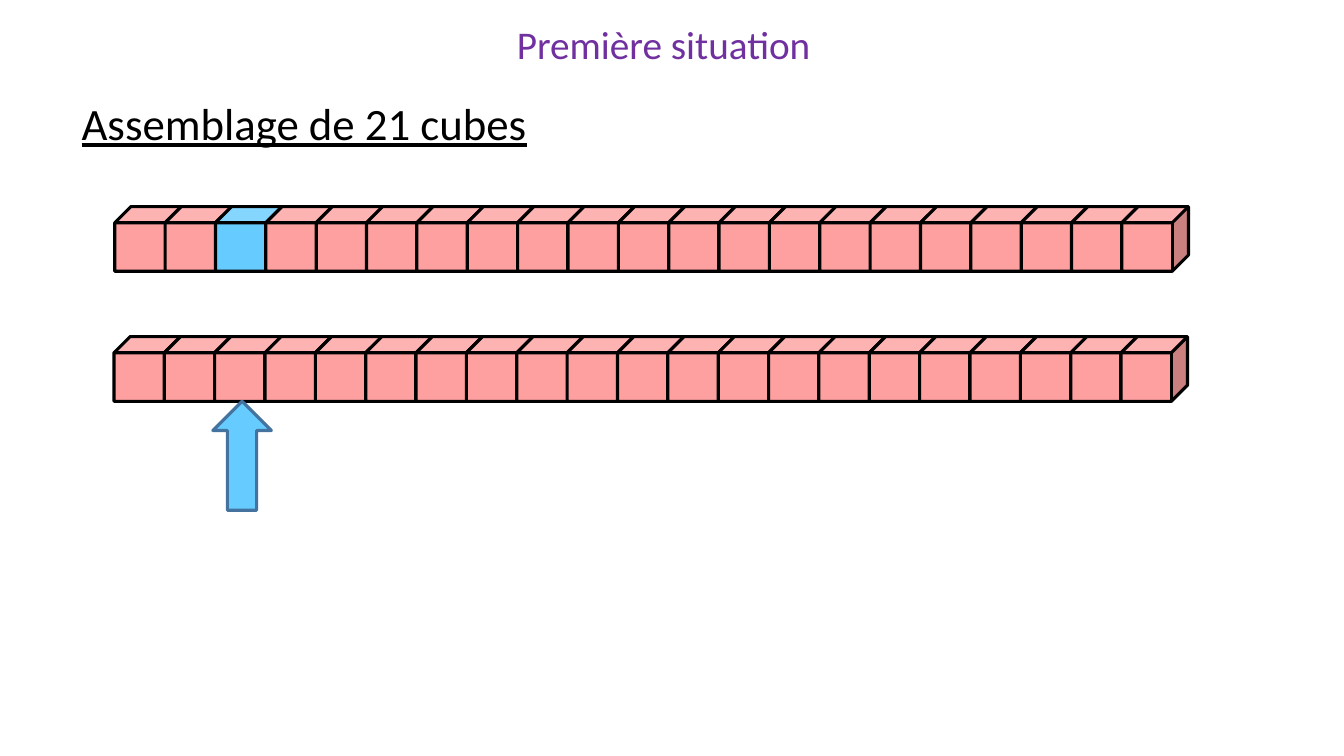
from dataclasses import dataclass

from pptx import Presentation
from pptx.dml.color import RGBColor
from pptx.enum.shapes import MSO_SHAPE
from pptx.enum.text import MSO_ANCHOR, PP_ALIGN
from pptx.util import Pt


@dataclass(frozen=True)
class Theme:
    """Colours, font and sizes of the slide."""

    font: str = "Calibri"
    title_size: float = 28
    heading_size: float = 32
    outline_width: float = 2.25
    title: str = "7030A0"
    ink: str = "000000"
    cube: str = "FEA0A0"
    highlight: str = "66CCFF"
    arrow_outline: str = "43739E"


class SlideBuilder:
    """Draws styled elements on one slide, with lengths in points."""

    def __init__(self, slide, theme):
        self.slide = slide
        self.theme = theme

    def text(self, box, wording, size, color, underline=None,
             align=PP_ALIGN.LEFT, anchor=MSO_ANCHOR.TOP, line_spacing=None):
        """Add a text box holding a single run."""
        frame = self.slide.shapes.add_textbox(*map(Pt, box)).text_frame
        frame.word_wrap = True
        frame.vertical_anchor = anchor
        paragraph = frame.paragraphs[0]
        paragraph.alignment = align
        paragraph.line_spacing = line_spacing
        run = paragraph.add_run()
        run.text = wording
        run.font.name = self.theme.font
        run.font.size = Pt(size)
        run.font.underline = underline
        run.font.color.rgb = RGBColor.from_string(color)

    def shape(self, kind, box, fill, outline, shapes=None):
        """Add a filled and outlined preset shape."""
        if shapes is None:
            shapes = self.slide.shapes
        shape = shapes.add_shape(kind, *map(Pt, box))
        shape.shadow.inherit = False
        shape.fill.solid()
        shape.fill.fore_color.rgb = RGBColor.from_string(fill)
        shape.line.color.rgb = RGBColor.from_string(outline)
        shape.line.width = Pt(self.theme.outline_width)

    def cube_bar(self, left, top, count=21, highlighted=None):
        """Add a grouped row of overlapping cubes."""
        width, height, pitch = 47.5, 46.2, 35.97
        group = self.slide.shapes.add_group_shape()
        for index in range(count):
            fill = self.theme.highlight if index == highlighted else self.theme.cube
            box = (left + index * pitch, top, width, height)
            self.shape(MSO_SHAPE.CUBE, box, fill, self.theme.ink, group.shapes)


def main():
    """Build and save the slide."""
    presentation = Presentation()
    presentation.slide_width, presentation.slide_height = Pt(960), Pt(540)
    slide = presentation.slides.add_slide(presentation.slide_layouts[6])
    theme = Theme()
    builder = SlideBuilder(slide, theme)
    builder.cube_bar(81.4, 240.5)
    builder.text((60, 20, 828, 27.4), "Première situation", theme.title_size,
                 theme.title, align=PP_ALIGN.CENTER, anchor=MSO_ANCHOR.MIDDLE,
                 line_spacing=0.9)
    builder.cube_bar(82, 147.6, highlighted=2)
    builder.text((51.2, 64.8, 545.8, 46), "Assemblage de 21 cubes",
                 theme.heading_size, theme.ink, underline=True)
    builder.shape(MSO_SHAPE.UP_ARROW, (152, 286.6, 41.8, 77.8),
                  theme.highlight, theme.arrow_outline)
    presentation.save("out.pptx")


if __name__ == "__main__":
    main()
